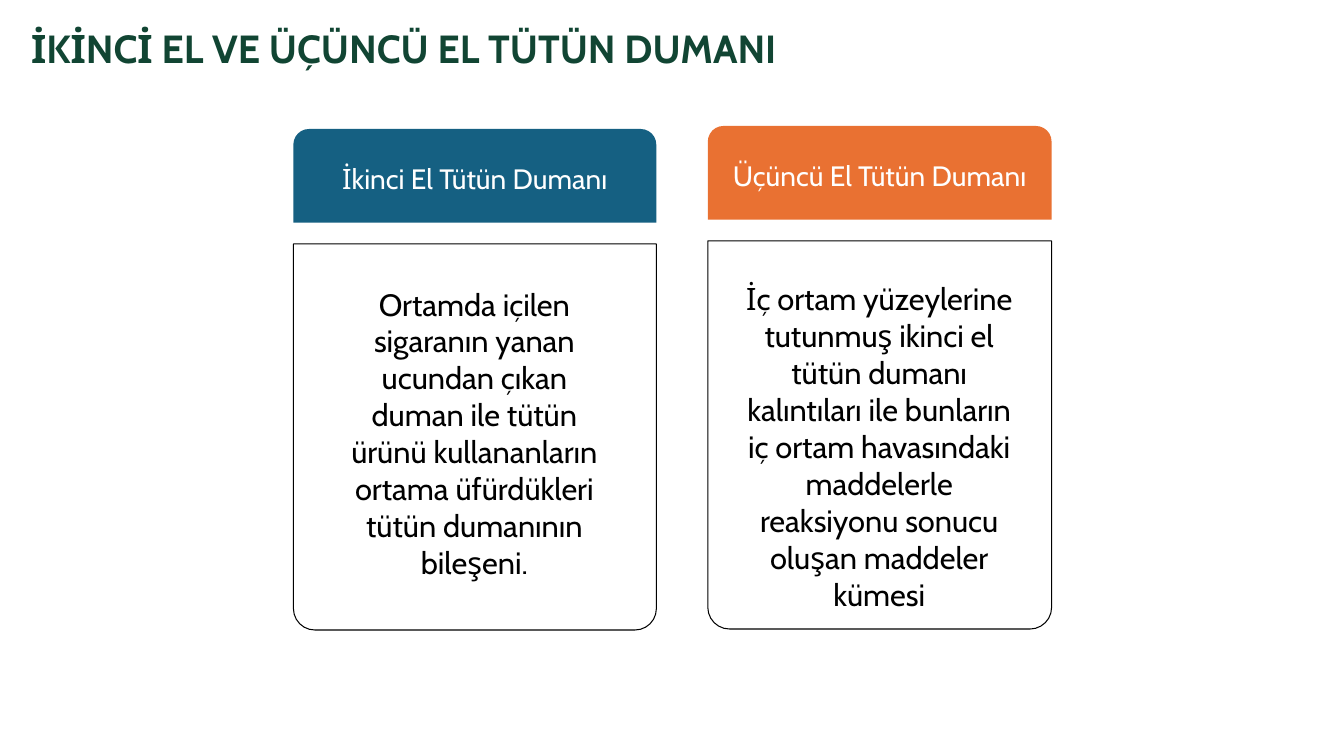
from pptx import Presentation
from pptx.dml.color import RGBColor
from pptx.enum.shapes import MSO_SHAPE
from pptx.enum.text import MSO_ANCHOR, PP_ALIGN
from pptx.util import Inches, Pt

GREEN = RGBColor(0x11, 0x45, 0x33)
BLUE = RGBColor(0x15, 0x60, 0x82)
ORANGE = RGBColor(0xE9, 0x71, 0x32)
BLACK = RGBColor(0, 0, 0)
WHITE = RGBColor(255, 255, 255)

CARDS = [
    dict(left=2.91, width=3.6, top=1.28, color=BLUE,
         head="İkinci El Tütün Dumanı",
         frame=(2.42, 3.83, 0.059), text=(3.2, 2.73, 3.01, 3.21), pad=0.1,
         body="Ortamda içilen sigaranın yanan ucundan çıkan duman ile tütün "
              "ürünü kullananların ortama üfürdükleri tütün dumanının bileşeni."),
    dict(left=7.02, width=3.41, top=1.25, color=ORANGE,
         head="Üçüncü El Tütün Dumanı",
         frame=(2.39, 3.85, 0.063), text=(7.21, 2.73, 3.02, 3.43), pad=0.05,
         body="İç ortam yüzeylerine tutunmuş ikinci el tütün dumanı "
              "kalıntıları ile bunların iç ortam havasındaki maddelerle "
              "reaksiyonu sonucu oluşan maddeler kümesi"),
]


def write(shape, text, size=22, color=BLACK, bold=False,
          align=PP_ALIGN.CENTER, anchor=MSO_ANCHOR.TOP, pad=0.05, font="Cabin"):
    frame = shape.text_frame
    frame.word_wrap = True
    frame.vertical_anchor = anchor
    frame.margin_left = frame.margin_right = Inches(0.1)
    frame.margin_top = frame.margin_bottom = Inches(pad)
    para = frame.paragraphs[0]
    para.alignment = align
    run = para.add_run()
    run.text = text
    run.font.name = font
    run.font.size = Pt(size)
    run.font.bold = bold
    run.font.color.rgb = color


class Deck:
    def __init__(self, font="Cabin"):
        self.font = font
        self.show = Presentation()
        self.show.slide_width = Inches(13.33)
        self.show.slide_height = Inches(7.5)
        self.slide = self.show.slides.add_slide(self.show.slide_layouts[6])

    def label(self, area, text, **style):
        box = self.slide.shapes.add_textbox(*map(Inches, area))
        write(box, text, font=self.font, **style)

    def panel(self, area, curve, fill=None, line=None, turn=0):
        shape = self.slide.shapes.add_shape(
            MSO_SHAPE.ROUND_2_SAME_RECTANGLE, *map(Inches, area))
        shape.shadow.inherit = False
        shape.adjustments[0] = curve
        shape.adjustments[1] = 0
        shape.rotation = turn
        if fill is None:
            shape.fill.background()
        else:
            shape.fill.solid()
            shape.fill.fore_color.rgb = fill
        if line is None:
            shape.line.fill.background()
        else:
            shape.line.color.rgb = line
            shape.line.width = Pt(0.75)
        return shape

    def card(self, left, width, top, color, head, frame, text, pad, body):
        low, height, curve = frame
        self.panel((left, low, width, height), curve, line=BLACK, turn=180)
        title = self.panel((left, top, width, 0.93), 0.167, fill=color)
        write(title, head, size=20, color=WHITE, font=self.font,
              anchor=MSO_ANCHOR.MIDDLE, pad=0.1)
        self.label(text, body, pad=pad)


def main():
    deck = Deck()
    deck.label((0.21, 0.19, 10.58, 0.57), "İKİNCİ EL VE ÜÇÜNCÜ EL TÜTÜN DUMANI",
               size=28, color=GREEN, bold=True, align=PP_ALIGN.LEFT)
    for card in CARDS:
        deck.card(**card)
    deck.show.save("out.pptx")


if __name__ == "__main__":
    main()
